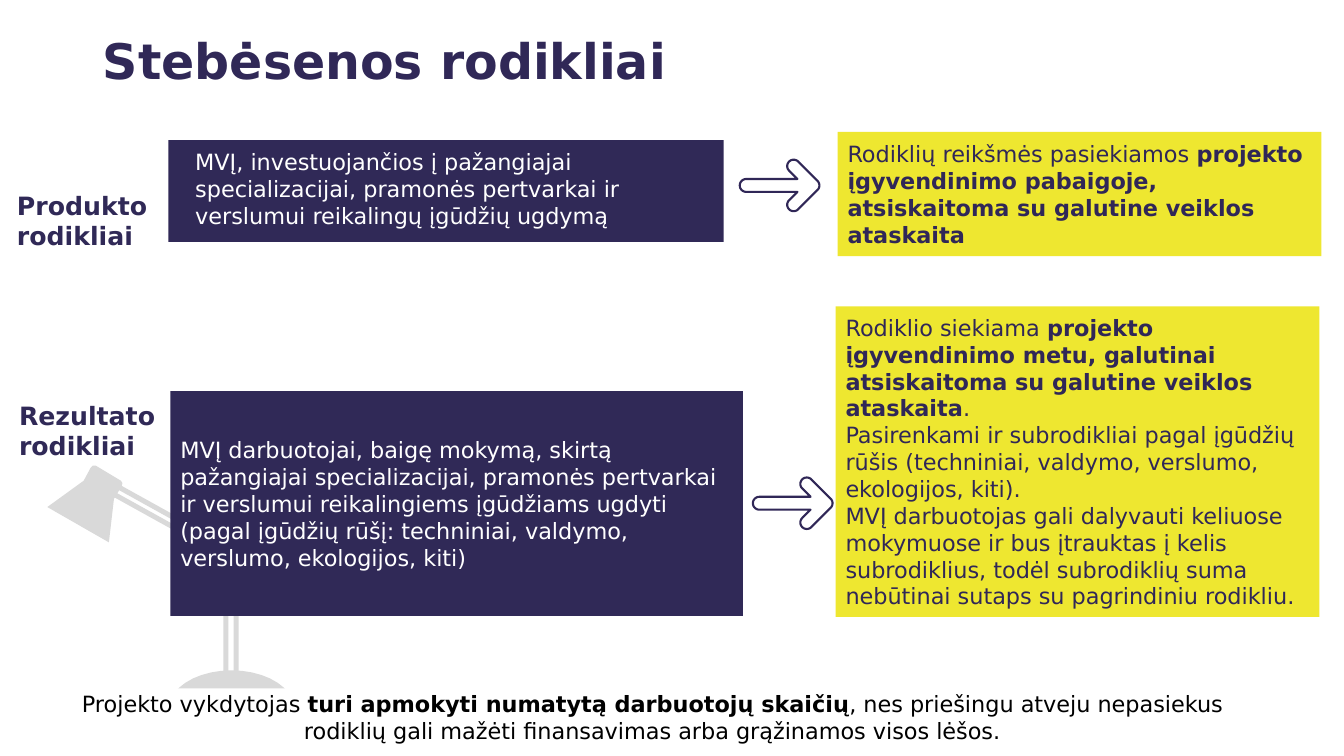
import math
from dataclasses import dataclass

import pptx
import pptx.dml.color
import pptx.enum.shapes
import pptx.enum.text
import pptx.util

Pt = pptx.util.Pt
SHAPE = pptx.enum.shapes.MSO_SHAPE
ANCHOR = pptx.enum.text.MSO_ANCHOR
ALIGN = pptx.enum.text.PP_ALIGN


@dataclass(frozen=True)
class Theme:
    font: str = "DejaVu Sans"
    navy: str = "302957"
    title: str = "302857"
    ink: str = "302757"
    yellow: str = "EEE730"
    grey: str = "D9D9D9"
    white: str = "FFFFFF"
    black: str = "000000"
    title_size: float = 35
    label_size: float = 18
    body_size: float = 16


THEME = Theme()


def rgb(color):
    return pptx.dml.color.RGBColor.from_string(color)


def write(tf, paragraphs, size, color, anchor=ANCHOR.MIDDLE, align=ALIGN.LEFT):
    """Fill a text frame; each paragraph is a list of (text, bold) runs."""
    tf.word_wrap = True
    tf.auto_size = pptx.enum.text.MSO_AUTO_SIZE.NONE
    tf.vertical_anchor = anchor
    for i, runs in enumerate(paragraphs):
        p = tf.add_paragraph() if i else tf.paragraphs[0]
        p.alignment = align
        for text, bold in runs:
            r = p.add_run()
            r.text = text
            r.font.name = THEME.font
            r.font.size = Pt(size)
            r.font.bold = bold
            r.font.color.rgb = rgb(color)


def add_box(shapes, box, fill):
    sp = shapes.add_shape(SHAPE.RECTANGLE, *map(Pt, box))
    sp.shadow.inherit = False
    sp.fill.solid()
    sp.fill.fore_color.rgb = rgb(fill)
    sp.line.fill.background()
    return sp


def add_text(s, box, paragraphs, size, color):
    sp = s.shapes.add_textbox(*map(Pt, box))
    write(sp.text_frame, paragraphs, size, color, ANCHOR.TOP)


def add_outline(shapes, left, top, points):
    """Add a closed outline whose points are relative to left and top."""
    points = [(Pt(left + x), Pt(top + y)) for x, y in points]
    builder = shapes.build_freeform(*points[0], scale=1.0)
    builder.add_line_segments(points[1:], close=True)
    sp = builder.convert_to_shape()
    sp.shadow.inherit = False
    return sp


def arc(cx, cy, rx, ry, start, end, steps=16):
    angles = [math.radians(start + (end - start) * i / steps) for i in range(steps + 1)]
    return [(cx + rx * math.cos(a), cy + ry * math.sin(a)) for a in angles]


def add_arrow(s, left, middle):
    """Outlined arrow with round ends, pointing right."""
    r, tip, wing = 4.6, 52.3, 13.8
    notch = tip - r * (1 + math.sqrt(2))
    points = arc(r, 0, r, r, 90, 270) + [(notch, -r)]
    points += arc(tip - wing, -wing, r, r, 135, 315)
    points += arc(tip, 0, r, r, -45, 45)
    points += arc(tip - wing, wing, r, r, 45, 225) + [(notch, r)]
    sp = add_outline(s.shapes, left, middle, points)
    sp.fill.background()
    sp.line.color.rgb = rgb(THEME.ink)
    sp.line.width = Pt(1.5)


def add_lamp(s, left, top):
    shapes = s.shapes.add_group_shape().shapes
    for x, y in ((89.8, -10.8), (86.2, -5.8)):
        add_box(shapes, (left + x, top + y, 3.6, 97.2), THEME.grey).rotation = 299
    for x in (133, 125.8):
        add_box(shapes, (left + x, top + 60.8, 3.6, 88.6), THEME.grey)
    base = arc(131.6, 174.3, 45.1, 28.1, 195, 345)
    shade = [(52.6, 10.8), (34.6, 0), (32.4, 0), (31, 1.5), (26, 10.8), (0, 29.6),
             (44, 54.8), (47.6, 23.8), (53.3, 14.4), (53.6, 12.4)]
    for points in (base, shade):
        sp = add_outline(shapes, left, top, points)
        sp.fill.solid()
        sp.fill.fore_color.rgb = rgb(THEME.grey)
        sp.line.fill.background()


def add_title(s, box, text):
    sp = s.shapes.title
    sp.left, sp.top, sp.width, sp.height = map(Pt, box)
    write(sp.text_frame, [[(text, True)]], THEME.title_size, THEME.title)


def add_panel(s, box, fill, paragraphs, color, align=ALIGN.LEFT):
    sp = add_box(s.shapes, box, fill)
    write(sp.text_frame, paragraphs, THEME.body_size, color, align=align)


def add_label(s, left, top, text):
    add_text(s, (left, top, 116.6, 51.1), [[(text, True)]], THEME.label_size, THEME.navy)


def add_product_row(s, left, top):
    add_box(s.shapes, (left + 115.2, top + 5.8, 396.7, 72.7), THEME.navy)
    add_text(s, (left + 127.4, top + 7.9, 347.8, 65.5), [[(
        "MVĮ, investuojančios į pažangiajai specializacijai, pramonės pertvarkai ir "
        "verslumui reikalingų įgūdžių ugdymą", False)]], THEME.body_size, THEME.white)
    add_label(s, left, top + 38.2, "Produkto rodikliai")
    add_arrow(s, left + 523.4, top + 38.2)
    add_panel(s, (left + 593.3, top, 345.6, 88.6), THEME.yellow, [[
        ("Rodiklių reikšmės pasiekiamos ", False),
        ("projekto įgyvendinimo pabaigoje, atsiskaitoma su galutine veiklos ataskaita", True),
    ]], THEME.ink)


def add_result_row(s, left, top):
    add_label(s, left, top + 63.4, "Rezultato rodikliai")
    add_panel(s, (left + 115.2, top + 60.5, 409, 160.6), THEME.navy, [[(
        "MVĮ darbuotojai, baigę mokymą, skirtą pažangiajai specializacijai, pramonės "
        "pertvarkai ir verslumui reikalingiems įgūdžiams ugdyti (pagal įgūdžių rūšį: "
        "techniniai, valdymo, verslumo, ekologijos, kiti)", False)]], THEME.white)
    add_arrow(s, left + 531.3, top + 140.6)
    add_panel(s, (left + 590.4, top, 345.6, 221.8), THEME.yellow, [
        [("Rodiklio siekiama ", False),
         ("projekto įgyvendinimo metu, galutinai atsiskaitoma su galutine veiklos ataskaita", True),
         (".", False)],
        [("Pasirenkami ir subrodikliai pagal įgūdžių rūšis (techniniai, valdymo, "
          "verslumo, ekologijos, kiti).", False)],
        [("MVĮ darbuotojas gali dalyvauti keliuose mokymuose ir bus įtrauktas į kelis "
          "subrodiklius, todėl subrodiklių suma nebūtinai sutaps su pagrindiniu "
          "rodikliu.", False)],
    ], THEME.ink)


def add_footer(s, box):
    add_panel(s, box, THEME.white, [[
        ("Projekto vykdytojas ", False),
        ("turi apmokyti numatytą darbuotojų skaičių", True),
        (", nes priešingu atveju nepasiekus rodiklių gali mažėti finansavimas arba "
         "grąžinamos visos lėšos.", False),
    ]], THEME.black, ALIGN.CENTER)


def main():
    prs = pptx.Presentation()
    prs.slide_width, prs.slide_height = Pt(960), Pt(540)
    s = prs.slides.add_slide(prs.slide_layouts[5])
    add_title(s, (66.2, 7.9, 425.5, 69.8), "Stebėsenos rodikliai")
    add_lamp(s, 33.8, 332.6)
    add_product_row(s, 5, 94.3)
    add_result_row(s, 6.5, 218.9)
    add_footer(s, (33.8, 491.8, 864.7, 40.3))
    prs.save("out.pptx")


if __name__ == "__main__":
    main()
